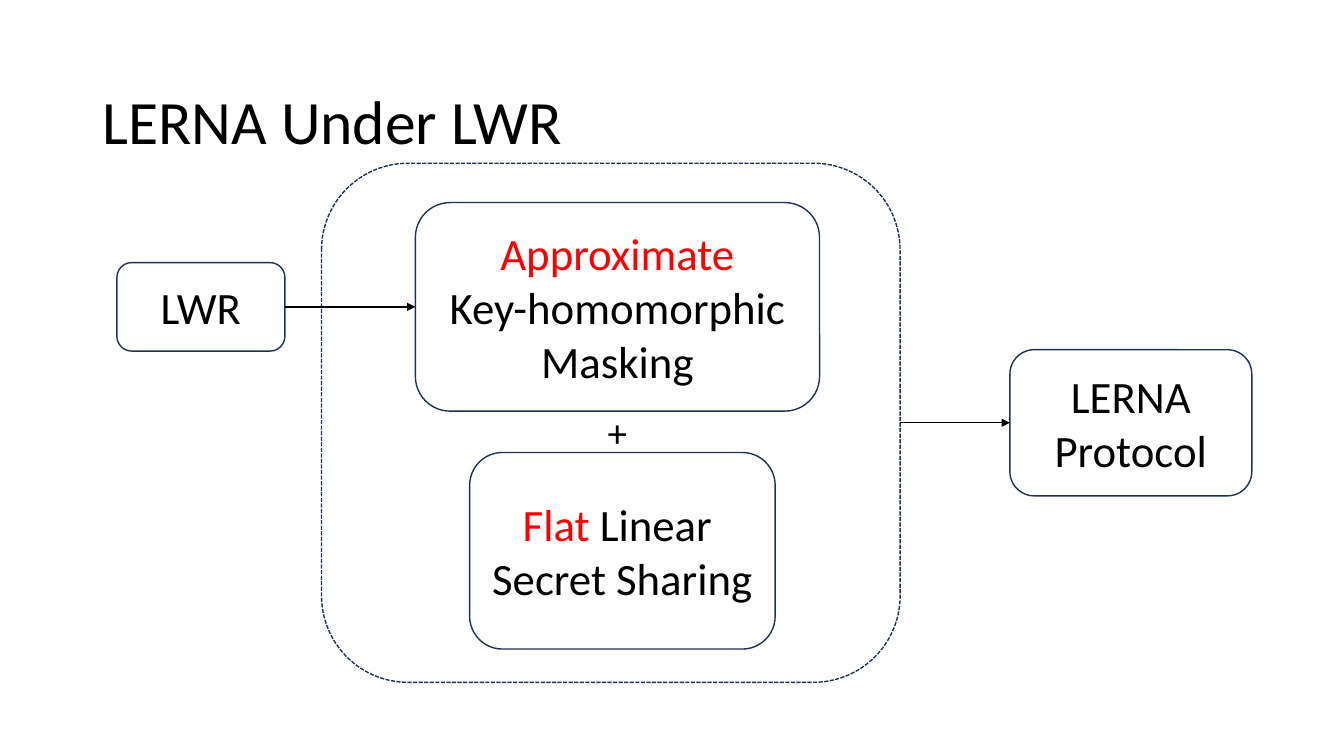
import pptx
import pptx.util
import pptx.dml.color
import pptx.enum.dml
import pptx.enum.shapes
import pptx.enum.text
import pptx.oxml.ns
from lxml import etree

Pt = pptx.util.Pt
RGBColor = pptx.dml.color.RGBColor
ALIGN = pptx.enum.text.PP_ALIGN
ANCHOR = pptx.enum.text.MSO_ANCHOR
AUTO_SIZE = pptx.enum.text.MSO_AUTO_SIZE
qn = pptx.oxml.ns.qn

COLORS = {"text": "000000", "accent": "FF0000", "outline": "1E3256", "arrow": "000000"}


def color(name):
    return RGBColor.from_string(COLORS[name])


def set_attributes(target, values):
    for name, value in values.items():
        setattr(target, name, value)


def write_text(shape, paragraphs, size, paragraph_format, frame_format):
    frame = shape.text_frame
    set_attributes(frame, {"word_wrap": True, **frame_format})
    for index, runs in enumerate(paragraphs):
        paragraph = frame.add_paragraph() if index else frame.paragraphs[0]
        set_attributes(paragraph, paragraph_format)
        for text, color_name in runs:
            run = paragraph.add_run()
            run.text = text
            set_attributes(run.font, {"name": "Calibri", "size": Pt(size)})
            run.font.color.rgb = color(color_name)


def add_title(slide, box, text):
    title = slide.shapes.title
    set_attributes(title, dict(zip(("left", "top", "width", "height"), map(Pt, box))))
    write_text(title, [[(text, "text")]], 44,
               {"alignment": ALIGN.LEFT, "line_spacing": 0.9},
               {"vertical_anchor": ANCHOR.MIDDLE, "auto_size": AUTO_SIZE.NONE})


def add_rounded_box(slide, box, paragraphs=()):
    shape = slide.shapes.add_shape(
        pptx.enum.shapes.MSO_SHAPE.ROUNDED_RECTANGLE, *map(Pt, box))
    shape.shadow.inherit = False
    shape.fill.background()
    shape.line.color.rgb = color("outline")
    shape.line.width = Pt(1)
    write_text(shape, paragraphs, 32, {"alignment": ALIGN.CENTER},
               {"vertical_anchor": ANCHOR.MIDDLE})
    return shape


def add_arrow(slide, source, target):
    right_site, left_site = 3, 1
    arrow = slide.shapes.add_connector(
        pptx.enum.shapes.MSO_CONNECTOR.STRAIGHT, 0, 0, 0, 0)
    arrow.begin_connect(source, right_site)
    arrow.end_connect(target, left_site)
    arrow.line.color.rgb = color("arrow")
    arrow.line.width = Pt(1)
    etree.SubElement(arrow.line._get_or_add_ln(), qn("a:tailEnd"), type="triangle")
    etree.SubElement(arrow._element.spPr, qn("a:effectLst"))


def add_building_blocks(slide, box):
    left, top, width, height = box
    masking = add_rounded_box(
        slide, (left + 67, top + 28.1, 288.7, 149),
        [[("Approximate", "accent")], [("Key-homomorphic Masking", "text")]])
    add_rounded_box(
        slide, (left + 105.8, top + 206.6, 218.2, 140.4),
        [[("Flat", "accent"), (" Linear ", "text")], [("Secret Sharing", "text")]])
    frame = add_rounded_box(slide, box)
    frame.line.dash_style = pptx.enum.dml.MSO_LINE.SQUARE_DOT
    plus = slide.shapes.add_textbox(*map(Pt, (left + 197.3, top + 171.4, 43.9, 41)))
    write_text(plus, [[("+", "text")]], 28, {},
               {"auto_size": AUTO_SIZE.SHAPE_TO_FIT_TEXT})
    return frame, masking


def add_diagram(slide, box):
    left, top, width, height = box
    frame, masking = add_building_blocks(slide, (left + 146.2, top, 413.3, height))
    protocol = add_rounded_box(
        slide, (left + width - 172.8, top + (height - 104.4) / 2, 172.8, 104.4),
        [[("LERNA Protocol", "text")]])
    assumption = add_rounded_box(
        slide, (left, top + 71, 120, 63.2), [[("LWR", "text")]])
    add_arrow(slide, frame, protocol)
    add_arrow(slide, assumption, masking)


def main():
    presentation = pptx.Presentation()
    set_attributes(presentation, {"slide_width": Pt(960), "slide_height": Pt(540)})
    slide = presentation.slides.add_slide(presentation.slide_layouts[5])
    add_title(slide, (66, 36.7, 828, 104.4), "LERNA Under LWR")
    add_diagram(slide, (83.5, 116.6, 810.7, 370.8))
    presentation.save("out.pptx")


if __name__ == "__main__":
    main()
